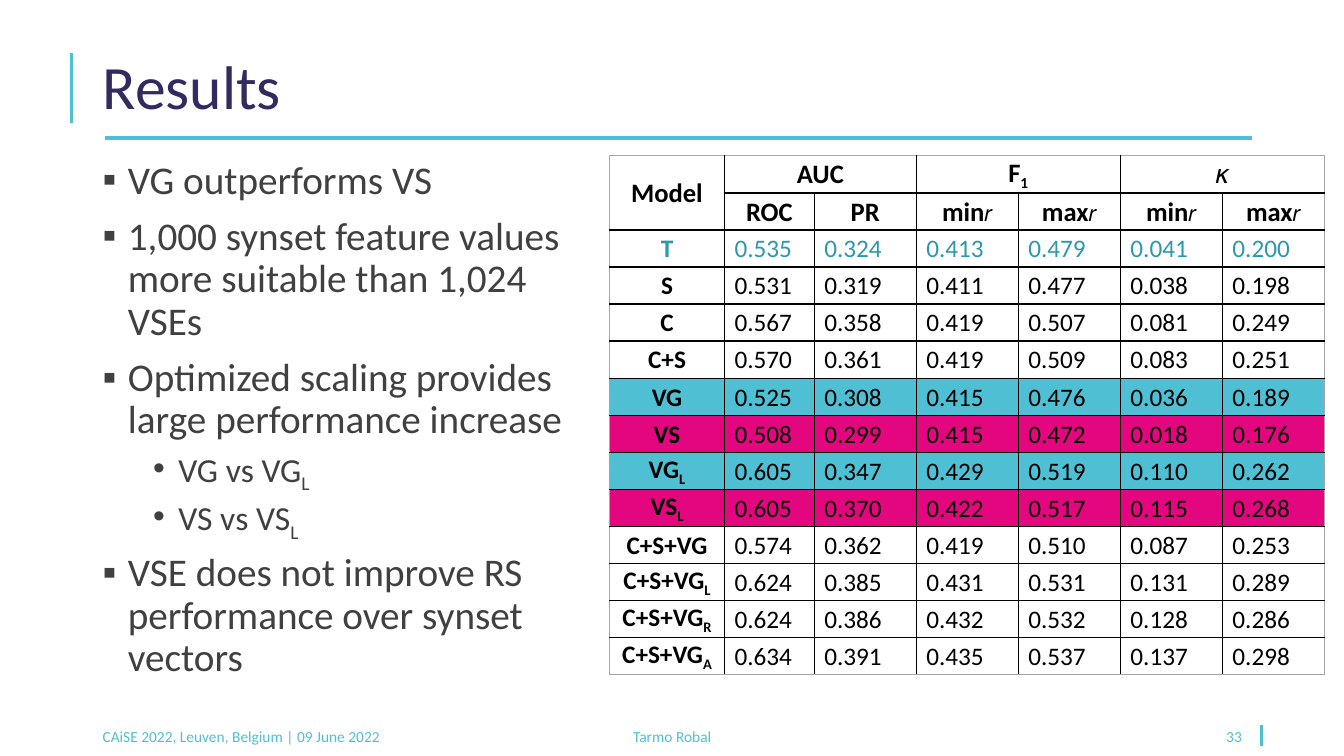
from dataclasses import dataclass

from lxml import etree
from pptx import Presentation
from pptx.dml.color import RGBColor
from pptx.enum.shapes import MSO_CONNECTOR
from pptx.enum.text import MSO_ANCHOR, MSO_AUTO_SIZE, PP_ALIGN
from pptx.oxml.ns import qn
from pptx.util import Pt

LEFT, CENTER, RIGHT = PP_ALIGN.LEFT, PP_ALIGN.CENTER, PP_ALIGN.RIGHT
MIDDLE, TOP = MSO_ANCHOR.MIDDLE, MSO_ANCHOR.TOP
NO_AUTOFIT = MSO_AUTO_SIZE.NONE
STRAIGHT = MSO_CONNECTOR.STRAIGHT


@dataclass(frozen=True)
class Theme:
    font: str = "Calibri"
    title: str = "332B60"
    body: str = "404040"
    accent: str = "4FBFD3"
    baseline: str = "2B99AB"
    pink: str = "E4067E"
    ink: str = "000000"
    frame: str = "A6A6A6"
    title_size: float = 44
    body_sizes: tuple = (28, 24)
    header_size: float = 19
    range_size: float = 16
    value_size: float = 18
    footer_size: float = 11


THEME = Theme()

POINTS = [
    (0, "VG outperforms VS"),
    (0, "1,000 synset feature values more suitable than 1,024 VSEs"),
    (0, "Optimized scaling provides large performance increase"),
    (1, "VG vs VG_L"),
    (1, "VS vs VS_L"),
    (0, "VSE does not improve RS performance over synset vectors"),
]
BULLETS = (
    {"char": "▪", "indent": 18, "space": 10},
    {"char": "•", "indent": 54, "space": 5},
)

GROUPS = ["Model", "AUC", "", "F_1", "", "𝜅", ""]
MEASURES = ["", "ROC", "PR", "min𝑟", "max𝑟", "min𝑟", "max𝑟"]
RESULTS = [
    ["T", "0.535", "0.324", "0.413", "0.479", "0.041", "0.200"],
    ["S", "0.531", "0.319", "0.411", "0.477", "0.038", "0.198"],
    ["C", "0.567", "0.358", "0.419", "0.507", "0.081", "0.249"],
    ["C+S", "0.570", "0.361", "0.419", "0.509", "0.083", "0.251"],
    ["VG", "0.525", "0.308", "0.415", "0.476", "0.036", "0.189"],
    ["VS", "0.508", "0.299", "0.415", "0.472", "0.018", "0.176"],
    ["VG_L", "0.605", "0.347", "0.429", "0.519", "0.110", "0.262"],
    ["VS_L", "0.605", "0.370", "0.422", "0.517", "0.115", "0.268"],
    ["C+S+VG", "0.574", "0.362", "0.419", "0.510", "0.087", "0.253"],
    ["C+S+VG_L", "0.624", "0.385", "0.431", "0.531", "0.131", "0.289"],
    ["C+S+VG_R", "0.624", "0.386", "0.432", "0.532", "0.128", "0.286"],
    ["C+S+VG_A", "0.634", "0.391", "0.435", "0.537", "0.137", "0.298"],
]
MERGES = [(0, 0, 1, 0), (0, 1, 0, 2), (0, 3, 0, 4), (0, 5, 0, 6)]
HIGHLIGHTS = {"VG": THEME.accent, "VG_L": THEME.accent,
              "VS": THEME.pink, "VS_L": THEME.pink}
COLUMN_WIDTHS = [82.1, 64.1] + [72.9] * 5


def set_attributes(target, values):
    for name, value in values.items():
        setattr(target, name, value)


def place(shape, box):
    set_attributes(shape, dict(zip(("left", "top", "width", "height"), map(Pt, box))))


def add_run(paragraph, text, size, color, bold=False):
    run = paragraph.add_run()
    run.text = text
    set_attributes(run.font, {"name": THEME.font, "size": Pt(size), "bold": bold})
    run.font.color.rgb = RGBColor.from_string(color)
    return run


def write(paragraph, text, size, color, bold=False):
    """Write text; what follows an underscore is subscript, and 𝑟 is smaller."""
    main, _, subscript = text.partition("_")
    stem = main.removesuffix("𝑟")
    add_run(paragraph, stem, size, color, bold)
    if stem != main:
        add_run(paragraph, "𝑟", THEME.range_size, color, bold)
    if subscript:
        run = add_run(paragraph, subscript, size, color, bold)
        run.font._element.set("baseline", "-25000")


def prepare_frame(shape, anchor):
    set_attributes(shape.text_frame, {"word_wrap": True, "auto_size": NO_AUTOFIT,
                                      "vertical_anchor": anchor})
    return shape.text_frame


def add_rule(slide, start, end):
    rule = slide.shapes.add_connector(STRAIGHT, *map(Pt, start + end))
    rule.line.color.rgb = RGBColor.from_string(THEME.accent)
    rule.line.width = Pt(2.25)
    etree.SubElement(rule._element.spPr, qn("a:effectLst"))


def add_title(slide, box):
    left, top, width, height = box
    place(slide.shapes.title, box)
    paragraph = prepare_frame(slide.shapes.title, MIDDLE).paragraphs[0]
    set_attributes(paragraph, {"alignment": LEFT, "line_spacing": 0.9})
    write(paragraph, "Results", THEME.title_size, THEME.title)
    bottom = top + height
    add_rule(slide, (left - 15, top + 9.4), (left - 15, bottom - 10.6))
    add_rule(slide, (left + 8.6, bottom), (left + width, bottom))


def add_points(slide, box):
    placeholder = slide.placeholders[1]
    place(placeholder, box)
    frame = prepare_frame(placeholder, TOP)
    for index, (level, text) in enumerate(POINTS):
        paragraph = frame.add_paragraph() if index else frame.paragraphs[0]
        bullet = BULLETS[level]
        set_attributes(paragraph, {"level": level, "alignment": LEFT, "line_spacing": 0.9,
                                   "space_before": Pt(bullet["space"])})
        properties = paragraph._p.get_or_add_pPr()
        properties.set("marL", str(Pt(bullet["indent"])))
        properties.set("indent", str(Pt(-18)))
        etree.SubElement(properties, qn("a:buFont"), typeface="Arial")
        etree.SubElement(properties, qn("a:buChar"), char=bullet["char"])
        write(paragraph, text, THEME.body_sizes[level], THEME.body)


def add_borders(cell, outer_edges):
    properties = cell._tc.get_or_add_tcPr()
    for side in "LRTB":
        outer = outer_edges[side]
        line = etree.SubElement(properties, qn(f"a:ln{side}"), w=str(Pt(0.5 if outer else 1)))
        fill = etree.SubElement(line, qn("a:solidFill"))
        etree.SubElement(fill, qn("a:srgbClr"), val=THEME.frame if outer else THEME.ink)


def fill_cell(cell, color):
    if color is None:
        cell.fill.background()
        return
    cell.fill.solid()
    cell.fill.fore_color.rgb = RGBColor.from_string(color)
    tint = cell._tc.tcPr.find(".//" + qn("a:srgbClr"))
    etree.SubElement(tint, qn("a:alpha"), val="28000")


def add_results_table(slide, box):
    rows = [GROUPS, MEASURES] + RESULTS
    row_count, column_count = len(rows), len(COLUMN_WIDTHS)
    table = slide.shapes.add_table(row_count, column_count, *map(Pt, box)).table
    set_attributes(table, {"first_row": False, "horz_banding": False})
    for column, width in zip(table.columns, COLUMN_WIDTHS):
        column.width = Pt(width)
    for row in table.rows:
        row.height = Pt(box[3] / row_count)
    for top, left, bottom, right in MERGES:
        table.cell(top, left).merge(table.cell(bottom, right))
    for row_index, values in enumerate(rows):
        header = row_index < 2
        size = THEME.header_size if header else THEME.value_size
        color = THEME.baseline if values[0] == "T" else THEME.ink
        for column_index, text in enumerate(values):
            cell = table.cell(row_index, column_index)
            set_attributes(cell, {"vertical_anchor": MIDDLE, "margin_left": Pt(7.2),
                                  "margin_right": Pt(7.2), "margin_top": 0,
                                  "margin_bottom": 0})
            add_borders(cell, {
                "L": column_index == 0,
                "R": column_index + cell.span_width == column_count,
                "T": row_index == 0,
                "B": row_index + cell.span_height == row_count,
            })
            fill_cell(cell, HIGHLIGHTS.get(values[0]))
            if text:
                label = header or column_index == 0
                paragraph = cell.text_frame.paragraphs[0]
                set_attributes(paragraph, {"alignment": CENTER if label else LEFT,
                                           "line_spacing": 1.05})
                write(paragraph, text, size, color, label)


def add_footer(slide, box):
    left, top, width, height = box
    parts = [
        ("CAiSE 2022, Leuven, Belgium | 09 June 2022", 0, 238, LEFT),
        ("Tarmo Robal", 252, 324, CENTER),
        ("33", width - 216, 216, RIGHT),
    ]
    for text, offset, part_width, alignment in parts:
        text_box = slide.shapes.add_textbox(*map(Pt, (left + offset, top, part_width, height)))
        paragraph = prepare_frame(text_box, MIDDLE).paragraphs[0]
        paragraph.alignment = alignment
        write(paragraph, text, THEME.footer_size, THEME.accent)
    edge = left + width + 7.2
    add_rule(slide, (edge, top), (edge, top + 15.1))


def main():
    presentation = Presentation()
    set_attributes(presentation, {"slide_width": Pt(960), "slide_height": Pt(540)})
    slide = presentation.slides.add_slide(presentation.slide_layouts[1])
    add_title(slide, (66.2, 28.8, 828, 69.8))
    add_points(slide, (66.2, 110.9, 360, 398))
    add_results_table(slide, (435.4, 110.9, sum(COLUMN_WIDTHS), 370.4))
    add_footer(slide, (66.2, 517.7, 828, 16.6))
    presentation.save("out.pptx")


if __name__ == "__main__":
    main()
